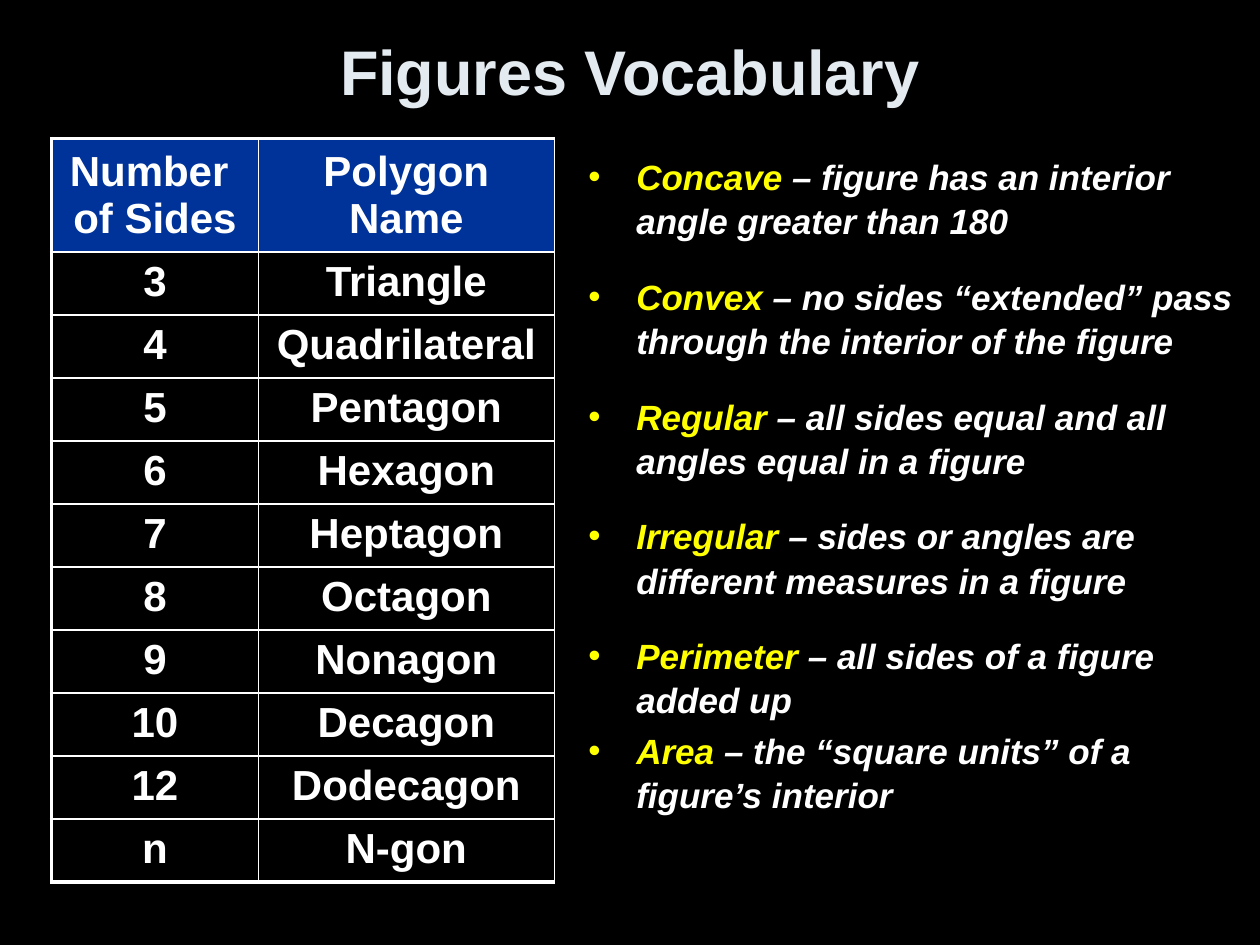
"""Build the Figures Vocabulary slide: a polygon table beside a list of definitions."""
import pptx
import pptx.dml.color
import pptx.enum.text
import pptx.oxml
import pptx.oxml.ns
import pptx.util
from pptx.util import Inches

COLORS = {"background": "000000", "title": "E3EBF1", "header": "003399",
          "text": "FFFFFF", "term": "FFFF00"}
POLYGONS = [
    ("Number \vof Sides", "Polygon Name"),
    ("3", "Triangle"), ("4", "Quadrilateral"), ("5", "Pentagon"),
    ("6", "Hexagon"), ("7", "Heptagon"), ("8", "Octagon"),
    ("9", "Nonagon"), ("10", "Decagon"), ("12", "Dodecagon"), ("n", "N-gon"),
]
DEFINITIONS = [
    ("Concave", "figure has an interior angle greater than 180"),
    ("Convex", "no sides “extended” pass through the interior of the figure"),
    ("Regular", "all sides equal and all angles equal in a figure"),
    ("Irregular", "sides or angles are different measures in a figure"),
    ("Perimeter", "all sides of a figure added up"),
    ("Area", "the “square units” of a figure’s interior"),
]


def style(font, size, color, italic=False):
    font.name = "Arial"
    font.size = pptx.util.Pt(size)
    font.bold = True
    font.italic = italic
    font.color.rgb = pptx.dml.color.RGBColor.from_string(COLORS[color])


def add_border(cell, position, side, width):
    cell._tc.get_or_add_tcPr().insert(position, pptx.oxml.parse_xml(
        f'<a:ln{side} {pptx.oxml.ns.nsdecls("a")} w="{pptx.util.Pt(width)}">'
        f'<a:solidFill><a:srgbClr val="{COLORS["text"]}"/></a:solidFill></a:ln{side}>'))


presentation = pptx.Presentation()
presentation.slide_width, presentation.slide_height = Inches(10), Inches(7.5)
slide = presentation.slides.add_slide(presentation.slide_layouts[1])
slide.background.fill.solid()
slide.background.fill.fore_color.rgb = pptx.dml.color.RGBColor.from_string(COLORS["background"])

heading, vocabulary = slide.placeholders
heading.left, heading.top = Inches(0.5), Inches(0.15)
heading.width, heading.height = Inches(9), Inches(0.81)
heading.text_frame.text = "Figures Vocabulary"
heading.text_frame.auto_size = pptx.enum.text.MSO_AUTO_SIZE.NONE
heading.text_frame.vertical_anchor = pptx.enum.text.MSO_ANCHOR.MIDDLE
heading.text_frame.paragraphs[0].alignment = pptx.enum.text.PP_ALIGN.CENTER
style(heading.text_frame.paragraphs[0].runs[0].font, 36, "title")

last_row = len(POLYGONS) - 1
polygons = slide.shapes.add_table(len(POLYGONS), 2, Inches(0.41), Inches(1.1),
                                  Inches(3.99), Inches(5.9)).table
polygons.columns[0].width, polygons.columns[1].width = Inches(1.64), Inches(2.35)
for row, entries in enumerate(POLYGONS):
    polygons.rows[row].height = Inches(0.5 if row else 0.9)
    for column, entry in enumerate(entries):
        cell = polygons.cell(row, column)
        cell.text_frame.text = entry
        cell.vertical_anchor = (pptx.enum.text.MSO_ANCHOR.TOP if row
                                else pptx.enum.text.MSO_ANCHOR.MIDDLE)
        paragraph = cell.text_frame.paragraphs[0]
        paragraph.alignment = pptx.enum.text.PP_ALIGN.CENTER
        for run in paragraph.runs:
            style(run.font, 24, "text")
        cell.fill.solid()
        cell.fill.fore_color.rgb = pptx.dml.color.RGBColor.from_string(
            COLORS["background" if row else "header"])
        thick_sides = {"L": column == 0, "R": False, "T": row == 0, "B": row == last_row}
        for position, (side, thick) in enumerate(thick_sides.items()):
            add_border(cell, position, side, 2.25 if thick else 1)

vocabulary.left, vocabulary.top = Inches(4.57), Inches(1.17)
vocabulary.width, vocabulary.height = Inches(5.43), Inches(5.73)
definitions = vocabulary.text_frame
definitions.auto_size = pptx.enum.text.MSO_AUTO_SIZE.NONE
for index, (term, meaning) in enumerate(DEFINITIONS):
    paragraph = definitions.add_paragraph() if index else definitions.paragraphs[0]
    indent = paragraph._p.get_or_add_pPr()
    indent.set("marL", str(Inches(0.38)))
    indent.set("indent", str(-Inches(0.38)))
    indent.append(pptx.oxml.parse_xml(f'<a:buChar {pptx.oxml.ns.nsdecls("a")} char="•"/>'))
    paragraph.line_spacing = 1.05
    paragraph.space_before = pptx.util.Pt(0 if index == 0 else 4 if term == "Area" else 18)
    for text, color in ((f"{term} ", "term"), (f"– {meaning}", "text")):
        run = paragraph.add_run()
        run.text = text
        style(run.font, 20, color, italic=True)

presentation.save("out.pptx")
